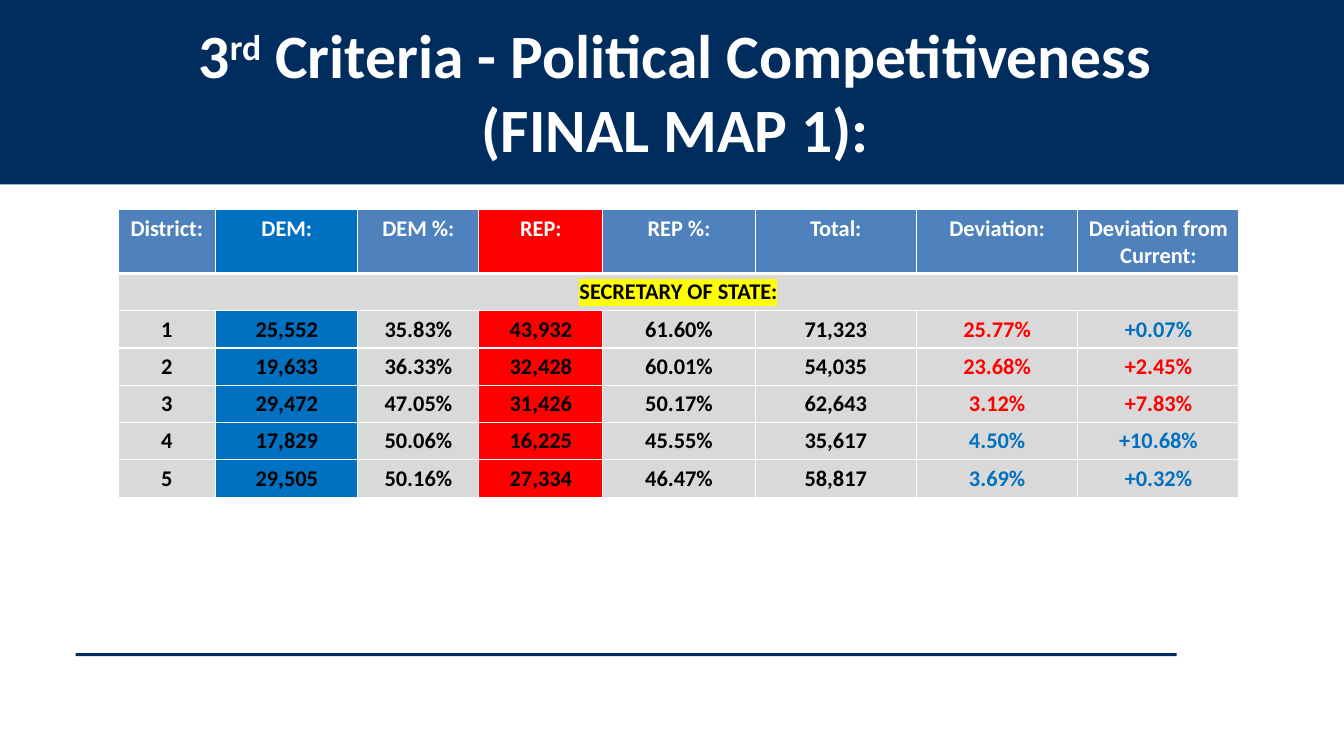
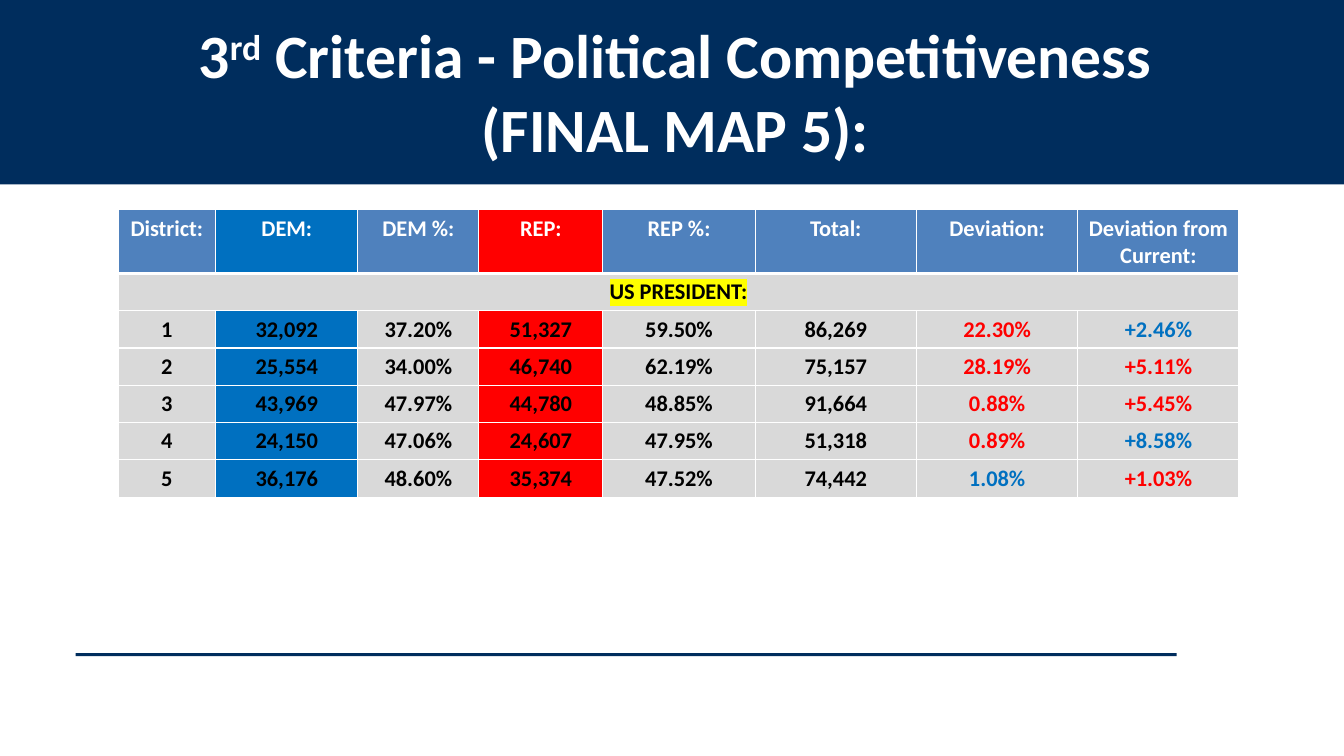
"""Build two slides that compare the political competitiveness of final maps."""
from lxml import etree
from pptx import Presentation
from pptx.dml.color import RGBColor
from pptx.enum.shapes import MSO_SHAPE
from pptx.enum.text import PP_ALIGN
from pptx.oxml.ns import qn
from pptx.util import Inches, Pt

RECT = MSO_SHAPE.RECTANGLE
CENTER = PP_ALIGN.CENTER

NAVY = RGBColor(0x00, 0x2D, 0x5D)
WHITE = RGBColor(0xFF, 0xFF, 0xFF)
BLACK = RGBColor(0x00, 0x00, 0x00)
STEEL = RGBColor(0x4F, 0x81, 0xBD)
BLUE = RGBColor(0x00, 0x70, 0xC0)
RED = RGBColor(0xFF, 0x00, 0x00)
GRAY = RGBColor(0xD9, 0xD9, 0xD9)
YELLOW = RGBColor(0xFF, 0xFF, 0x00)
FONT = "Calibri"

HEADS = ["District:", "DEM:", "DEM %:", "REP:", "REP %:", "Total:",
         "Deviation:", "Deviation from Current:"]
WIDTHS = [0.97, 1.41, 1.2, 1.23, 1.51, 1.6, 1.6, 1.6]
PARTY = {1: BLUE, 3: RED}
HEAD_H, ROW_H = 0.63, 0.37

STATE = [
    ("25,552", "35.83%", "43,932", "61.60%", "71,323", "25.77%", "+0.07%"),
    ("19,633", "36.33%", "32,428", "60.01%", "54,035", "23.68%", "+2.45%"),
    ("29,472", "47.05%", "31,426", "50.17%", "62,643", "3.12%", "+7.83%"),
    ("17,829", "50.06%", "16,225", "45.55%", "35,617", "4.50%", "+10.68%"),
    ("29,505", "50.16%", "27,334", "46.47%", "58,817", "3.69%", "+0.32%"),
]
US = [
    ("32,092", "37.20%", "51,327", "59.50%", "86,269", "22.30%", "+2.46%"),
    ("25,554", "34.00%", "46,740", "62.19%", "75,157", "28.19%", "+5.11%"),
    ("43,969", "47.97%", "44,780", "48.85%", "91,664", "0.88%", "+5.45%"),
    ("24,150", "47.06%", "24,607", "47.95%", "51,318", "0.89%", "+8.58%"),
    ("36,176", "48.60%", "35,374", "47.52%", "74,442", "1.08%", "+1.03%"),
]
MAPS = [
    ("(FINAL MAP 1):", "SECRETARY OF STATE:", STATE,
     [BLUE, RED, RED, BLUE, BLUE]),
    ("(FINAL MAP 5):", "US PRESIDENT:", US,
     [BLUE, RED, RED, BLUE, RED]),
]


def write(para, text, size=16, color=BLACK, raised=False, mark=None):
    para.alignment = CENTER
    run = para.add_run()
    run.text = text
    font = run.font
    font.name, font.size, font.bold = FONT, Pt(size), True
    font.color.rgb = color
    props = run._r.get_or_add_rPr()
    if raised:
        props.set("baseline", "30000")
    if mark is not None:
        glow = etree.Element(qn("a:highlight"))
        etree.SubElement(glow, qn("a:srgbClr"), val=str(mark))
        props.find(qn("a:solidFill")).addnext(glow)


def add_bar(slide, left, top, width, height):
    bar = slide.shapes.add_shape(
        RECT, Inches(left), Inches(top), Inches(width), Inches(height))
    bar.shadow.inherit = False
    bar.fill.solid()
    bar.fill.fore_color.rgb = NAVY
    bar.line.fill.background()


def add_title(slide, name):
    box = slide.shapes.add_textbox(
        Inches(0.56), Inches(0.12), Inches(11.78), Inches(2.32))
    frame = box.text_frame
    frame.word_wrap = True
    first, last = frame.paragraphs[0], frame.add_paragraph()
    for para in (first, last):
        para.level = 1
        props = para._p.get_or_add_pPr()
        props.set("marL", str(Inches(0.5)))
        props.set("indent", "0")
    write(first, "3", size=44, color=WHITE)
    write(first, "rd", size=44, color=WHITE, raised=True)
    write(first, " Criteria - Political Competitiveness", size=44, color=WHITE)
    write(last, name, size=44, color=WHITE)


def style_cell(cell, fill, top=1, bottom=1):
    props = cell._tc.get_or_add_tcPr()
    for side, width in zip("LRTB", (1, 1, top, bottom)):
        edge = etree.SubElement(props, qn(f"a:ln{side}"), w=str(Pt(width)))
        paint = etree.SubElement(edge, qn("a:solidFill"))
        etree.SubElement(paint, qn("a:srgbClr"), val=str(WHITE))
    cell.fill.solid()
    cell.fill.fore_color.rgb = fill


def add_votes(slide, race, votes, shifts):
    count = len(votes) + 2
    height = HEAD_H + ROW_H * (count - 1)
    table = slide.shapes.add_table(
        count, len(HEADS), Inches(1.17), Inches(2.08),
        Inches(sum(WIDTHS)), Inches(height)).table
    for col, width in zip(table.columns, WIDTHS):
        col.width = Inches(width)
    for row in table.rows:
        row.height = Inches(ROW_H)
    table.rows[0].height = Inches(HEAD_H)

    for col, head in enumerate(HEADS):
        cell = table.cell(0, col)
        style_cell(cell, PARTY.get(col, STEEL), bottom=3)
        write(cell.text_frame.paragraphs[0], head, color=WHITE)
        style_cell(table.cell(1, col), GRAY, top=3)
    label = table.cell(1, 0)
    label.merge(table.cell(1, len(HEADS) - 1))
    write(label.text_frame.paragraphs[0], race, mark=YELLOW)

    for num, (vote, shift) in enumerate(zip(votes, shifts), 1):
        dem, rep = (float(vote[i].rstrip("%")) for i in (1, 3))
        colors = {6: BLUE if dem > rep else RED, 7: shift}
        for col, text in enumerate((str(num), *vote)):
            cell = table.cell(num + 1, col)
            style_cell(cell, PARTY.get(col, GRAY))
            write(cell.text_frame.paragraphs[0], text,
                  color=colors.get(col, BLACK))


def main():
    deck = Presentation()
    deck.slide_width, deck.slide_height = Inches(13.33), Inches(7.5)
    for name, race, votes, shifts in MAPS:
        slide = deck.slides.add_slide(deck.slide_layouts[6])
        add_bar(slide, 0, -0.03, 13.33, 1.86)
        add_bar(slide, 0.75, 6.48, 10.92, 0.03)
        add_title(slide, name)
        add_votes(slide, race, votes, shifts)
    deck.save("out.pptx")


if __name__ == "__main__":
    main()
